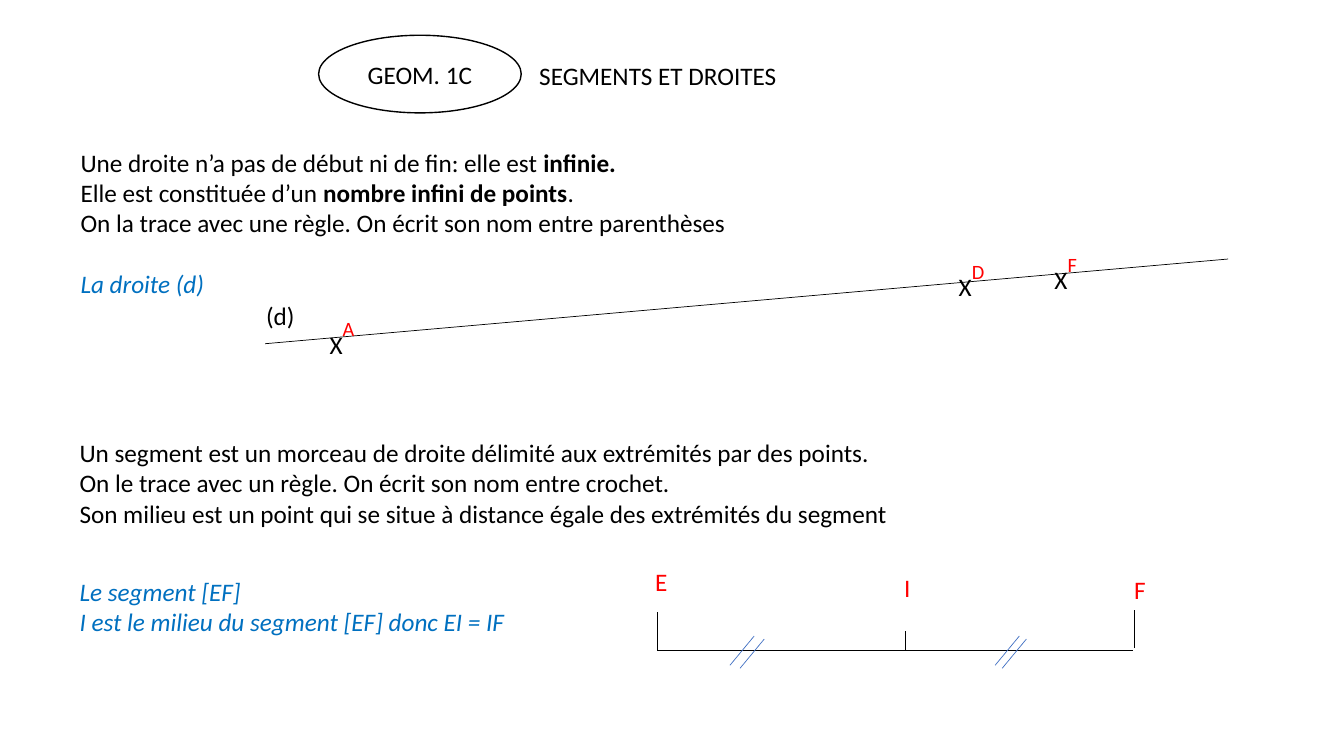
from pptx import Presentation
from pptx import util as u
from pptx.dml.color import RGBColor
from pptx.enum import shapes, text
from pptx.oxml.ns import qn
from lxml import etree

BLACK = RGBColor(0x00, 0x00, 0x00)
RED = RGBColor(0xFF, 0x00, 0x00)
BLUE = RGBColor(0x00, 0x70, 0xC0)
MARK_BLUE = RGBColor(0x44, 0x72, 0xC4)
FONT = "Calibri"
LINE_HEIGHT = u.Pt(22)


def format_run(run, color=BLACK, size=18, bold=False, italic=False):
    font = run.font
    font.name, font.size = FONT, u.Pt(size)
    font.bold, font.italic = bold, italic
    font.color.rgb = color


def add_text(slide, left, top, width, height, paragraphs, wrap=False):
    """Each paragraph is a list of (wording, format) pairs."""
    box = slide.shapes.add_textbox(
        u.Inches(left), u.Inches(top), u.Inches(width), u.Inches(height))
    frame = box.text_frame
    frame.word_wrap = wrap
    frame.auto_size = text.MSO_AUTO_SIZE.SHAPE_TO_FIT_TEXT
    for index, parts in enumerate(paragraphs):
        paragraph = frame.add_paragraph() if index else frame.paragraphs[0]
        for wording, style in parts:
            run = paragraph.add_run()
            run.text = wording
            format_run(run, **style)
    return frame


def add_line(slide, start, end, color=BLACK):
    points = [u.Inches(value) for value in (*start, *end)]
    line = slide.shapes.add_connector(shapes.MSO_CONNECTOR.STRAIGHT, *points)
    line.line.color.rgb = color
    line.line.width = u.Pt(0.5)
    etree.SubElement(line._element.spPr, qn("a:effectLst"))


def add_header(slide, left, top):
    # Lesson number in an ellipse, then the title
    badge = slide.shapes.add_shape(
        shapes.MSO_SHAPE.OVAL, u.Inches(left), u.Inches(top),
        u.Inches(2.01), u.Inches(0.77))
    badge.shadow.inherit = False
    badge.fill.background()
    badge.line.color.rgb = BLACK
    badge.line.width = u.Pt(1)
    frame = badge.text_frame
    frame.text = "GEOM. 1C"
    frame.vertical_anchor = text.MSO_ANCHOR.MIDDLE
    paragraph = frame.paragraphs[0]
    paragraph.alignment = text.PP_ALIGN.CENTER
    format_run(paragraph.runs[0])
    add_text(slide, left + 2.09, top + 0.2, 6.13, 0.4,
             [[("SEGMENTS ET DROITES", {})]], wrap=True)


def add_line_lesson(slide, left, top):
    bold = {"bold": True}
    frame = add_text(slide, left, top, 6.68, 1.62, [
        [("Une droite n’a pas de début ni de fin: elle est ", {}),
         ("infinie.", bold)],
        [("Elle est constituée d’un ", {}),
         ("nombre infini de points", bold), (".", {})],
        [("On la trace avec une règle. On écrit son nom entre parenthèses", {})],
        [("La droite (d)", {"color": BLUE, "italic": True})],
    ])
    frame.paragraphs[-1].space_before = LINE_HEIGHT


def add_line_drawing(slide, left, top):
    # Line (d) with its named points
    add_line(slide, (left, top + 0.84), (left + 9.55, top))
    add_text(slide, left - 0.09, top + 0.36, 0.49, 0.4, [[("(d)", {})]])
    for name, x, y, width in (("A", 0.54, 0.52, 0.47),
                              ("D", 6.78, -0.05, 0.48),
                              ("F", 7.73, -0.12, 0.44)):
        frame = add_text(slide, left + x, top + y, width, 0.52,
                         [[("X", {}), (name, {"color": RED, "size": 25})]])
        label = frame.paragraphs[0].runs[1]
        label._r.get_or_add_rPr().set("baseline", "50000")


def add_segment_lesson(slide, left, top):
    add_text(slide, left, top, 8.31, 1.01, [
        [("Un segment est un morceau de droite délimité aux extrémités par des points.", {})],
        [("On le trace avec un règle. On écrit son nom entre crochet.", {})],
        [("Son milieu est un point qui se situe à distance égale des extrémités du segment", {})],
    ])
    example = {"color": BLUE, "italic": True}
    add_text(slide, left, top + 1.38, 4.51, 0.71, [
        [("Le segment [EF]", example)],
        [("I est le milieu du segment [EF] donc EI = IF", example)],
    ])


def add_segment_drawing(slide, left, base):
    # Segment [EF], its ends and its midpoint I
    add_line(slide, (left, base), (left + 4.72, base))
    for name, x, foot, tick, label_x, label_y, width in (
            ("E", 0, 0, 0.38, -0.12, -0.88, 0.32),
            ("I", 2.46, 0, 0.19, 2.35, -0.82, 0.27),
            ("F", 4.73, -0.02, 0.38, 4.63, -0.8, 0.32)):
        add_line(slide, (left + x, base + foot), (left + x, base + foot - tick))
        add_text(slide, left + label_x, base + label_y, width, 0.4,
                 [[(name, {"color": RED})]])
    # Equal-length marks on each half
    for x, gap in ((0.72, 0.1), (3.35, 0.07)):
        for shift, drop in ((0, 0.15), (gap, 0.18)):
            start_x, start_y = left + x + shift, base + drop
            add_line(slide, (start_x, start_y),
                     (start_x + 0.24, start_y - 0.29), MARK_BLUE)


def main():
    presentation = Presentation()
    presentation.slide_width = u.Inches(13.33)
    presentation.slide_height = u.Inches(7.5)
    slide = presentation.slides.add_slide(presentation.slide_layouts[6])
    add_header(slide, 3.16, 0.35)
    add_line_lesson(slide, 0.7, 1.41)
    add_line_drawing(slide, 2.63, 2.57)
    add_segment_lesson(slide, 0.69, 4.29)
    add_segment_drawing(slide, 6.52, 6.45)
    presentation.save("out.pptx")


if __name__ == "__main__":
    main()
